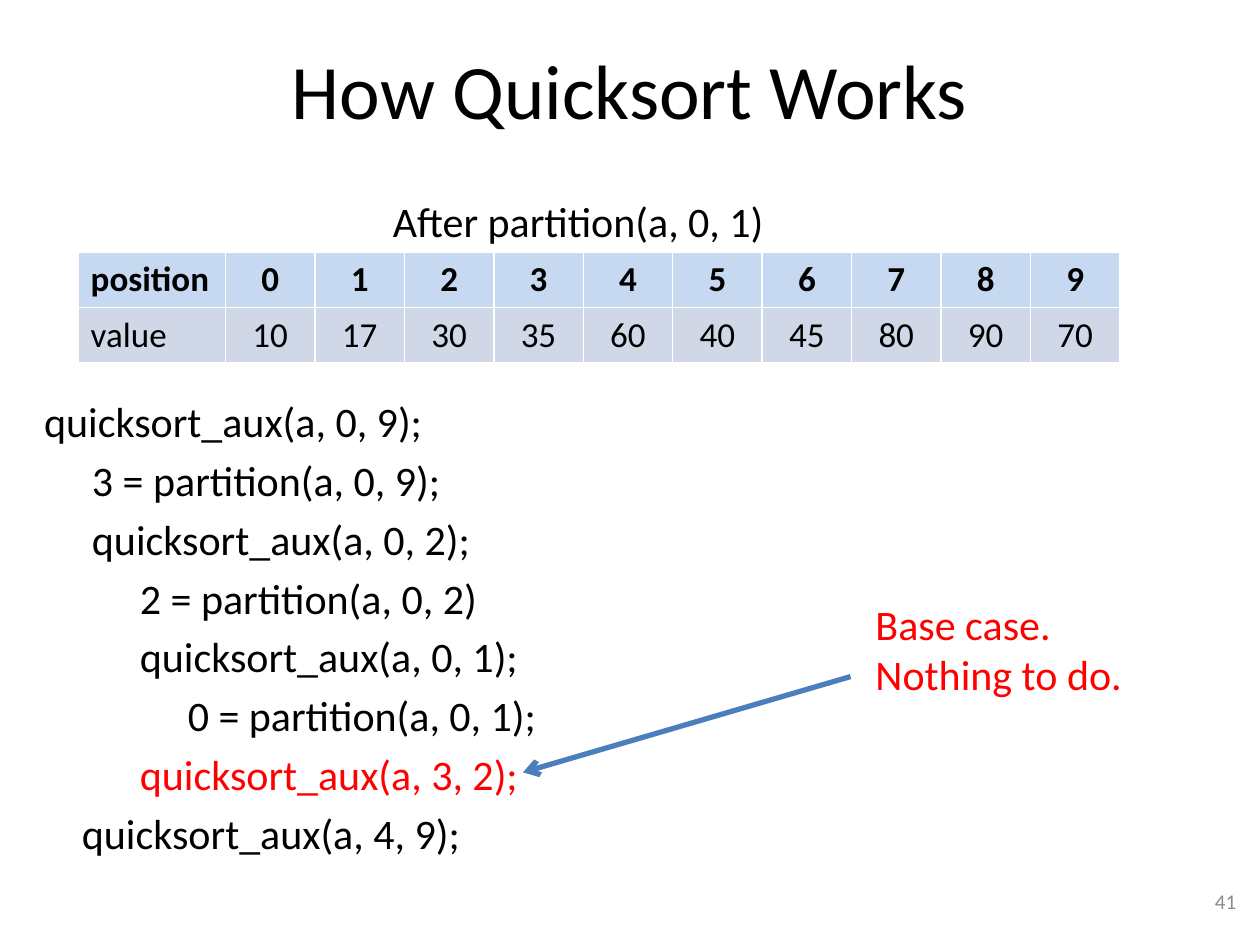
from lxml import etree
from pptx import Presentation
from pptx.dml.color import RGBColor
from pptx.enum.shapes import MSO_CONNECTOR
from pptx.enum.text import MSO_ANCHOR, MSO_AUTO_SIZE, PP_ALIGN
from pptx.oxml.ns import qn
from pptx.util import Emu, Pt

LEFT, CENTER, RIGHT = PP_ALIGN.LEFT, PP_ALIGN.CENTER, PP_ALIGN.RIGHT
TOP, MIDDLE = MSO_ANCHOR.TOP, MSO_ANCHOR.MIDDLE
NO_FIT = MSO_AUTO_SIZE.NONE
GROW = MSO_AUTO_SIZE.SHAPE_TO_FIT_TEXT
STRAIGHT = MSO_CONNECTOR.STRAIGHT

BLACK, RED, GRAY, BLUE = "000000", "FF0000", "8C8C8C", "4B7EBC"
HEADER_FILL, VALUE_FILL = "C6D9F1", "D0D8E8"
INDENT = 38

CALLS = [
    ("quicksort_aux(a, 0, 9);", 0, BLACK),
    ("3 = partition(a, 0, 9);", INDENT, BLACK),
    ("quicksort_aux(a, 0, 2);", INDENT, BLACK),
    ("2 = partition(a, 0, 2)", 2 * INDENT, BLACK),
    ("quicksort_aux(a, 0, 1);", 2 * INDENT, BLACK),
    ("0 = partition(a, 0, 1);", 3 * INDENT, BLACK),
    ("quicksort_aux(a, 3, 2);", 2 * INDENT, RED),
    ("quicksort_aux(a, 4, 9);", 30, BLACK),
]
VALUES = [10, 17, 30, 35, 60, 40, 45, 80, 90, 70]


def px(n):
    return Emu(n * 9144)


def rgb(color):
    return RGBColor.from_string(color)


class Deck:
    """Holds the text style and the current slide, and adds elements to it."""

    font = "Calibri"

    def __init__(self, width, height):
        self.prs = Presentation()
        self.prs.slide_width, self.prs.slide_height = px(width), px(height)
        self.s = self.prs.slides.add_slide(self.prs.slide_layouts[1])

    def run(self, p, text, size, color, align=LEFT, bold=False):
        p.alignment = align
        r = p.add_run()
        r.text = text
        r.font.name, r.font.size, r.font.bold = self.font, Pt(size), bold
        r.font.color.rgb = rgb(color)

    def place(self, sp, x, y, w, h):
        sp.left, sp.top, sp.width, sp.height = px(x), px(y), px(w), px(h)

    def title(self, text, *box):
        sp = self.s.shapes.title
        self.place(sp, *box)
        sp.text_frame.vertical_anchor = MIDDLE
        self.run(sp.text_frame.paragraphs[0], text, 44, BLACK, CENTER)

    def body(self, lines, *box):
        sp = self.s.placeholders[1]
        self.place(sp, *box)
        tf = sp.text_frame
        tf.auto_size = NO_FIT
        for i, (text, indent, color) in enumerate(lines):
            p = tf.add_paragraph() if i else tf.paragraphs[0]
            self.run(p, text, 24, color)
            pPr = p._p.get_or_add_pPr()
            pPr.set("marL", str(px(indent)))
            pPr.set("indent", "0")
            etree.SubElement(pPr, qn("a:buNone"))

    def text(self, lines, *box, size=24, color=BLACK, align=LEFT,
             anchor=TOP, wrap=False):
        tf = self.s.shapes.add_textbox(*map(px, box)).text_frame
        tf.word_wrap, tf.vertical_anchor = wrap, anchor
        tf.auto_size = NO_FIT if wrap else GROW
        for i, line in enumerate(lines):
            p = tf.add_paragraph() if i else tf.paragraphs[0]
            self.run(p, line, size, color, align)

    def table(self, rows, fills, widths, x, y, row_height):
        frame = self.s.shapes.add_table(
            len(rows), len(widths), px(x), px(y),
            px(sum(widths)), px(row_height * len(rows)))
        tbl = frame.table
        for col, width in zip(tbl.columns, widths):
            col.width = px(width)
        for i, (row, fill) in enumerate(zip(rows, fills)):
            for j, value in enumerate(row):
                cell = tbl.cell(i, j)
                cell.fill.solid()
                cell.fill.fore_color.rgb = rgb(fill)
                self.run(cell.text_frame.paragraphs[0], str(value), 20, BLACK,
                         CENTER if j else LEFT, bold=i == 0)

    def arrow(self, x1, y1, x2, y2, color, width):
        sp = self.s.shapes.add_connector(STRAIGHT, *map(px, (x1, y1, x2, y2)))
        sp.line.color.rgb = rgb(color)
        sp.line.width = Pt(width)
        etree.SubElement(sp.line._get_or_add_ln(), qn("a:tailEnd"), type="arrow")
        etree.SubElement(sp._element.spPr, qn("a:effectLst"))


def main():
    deck = Deck(1000, 750)
    deck.title("How Quicksort Works", 50, 8, 900, 125)
    deck.body(CALLS, 25, 309, 900, 391)
    deck.text(["41"], 758, 695, 233, 40, size=12, color=GRAY, align=RIGHT,
              anchor=MIDDLE, wrap=True)
    deck.table([["position", *range(10)], ["value", *VALUES]],
               [HEADER_FILL, VALUE_FILL], [117] + [71] * 10, 62, 200, 43)
    deck.text(["After partition(a, 0, 1)"], 302, 150, 318, 50)
    deck.text(["Base case.", "Nothing to do."], 685, 470, 217, 91, color=RED)
    deck.arrow(675, 537, 415, 613, BLUE, 3)
    deck.prs.save("out.pptx")


if __name__ == "__main__":
    main()
